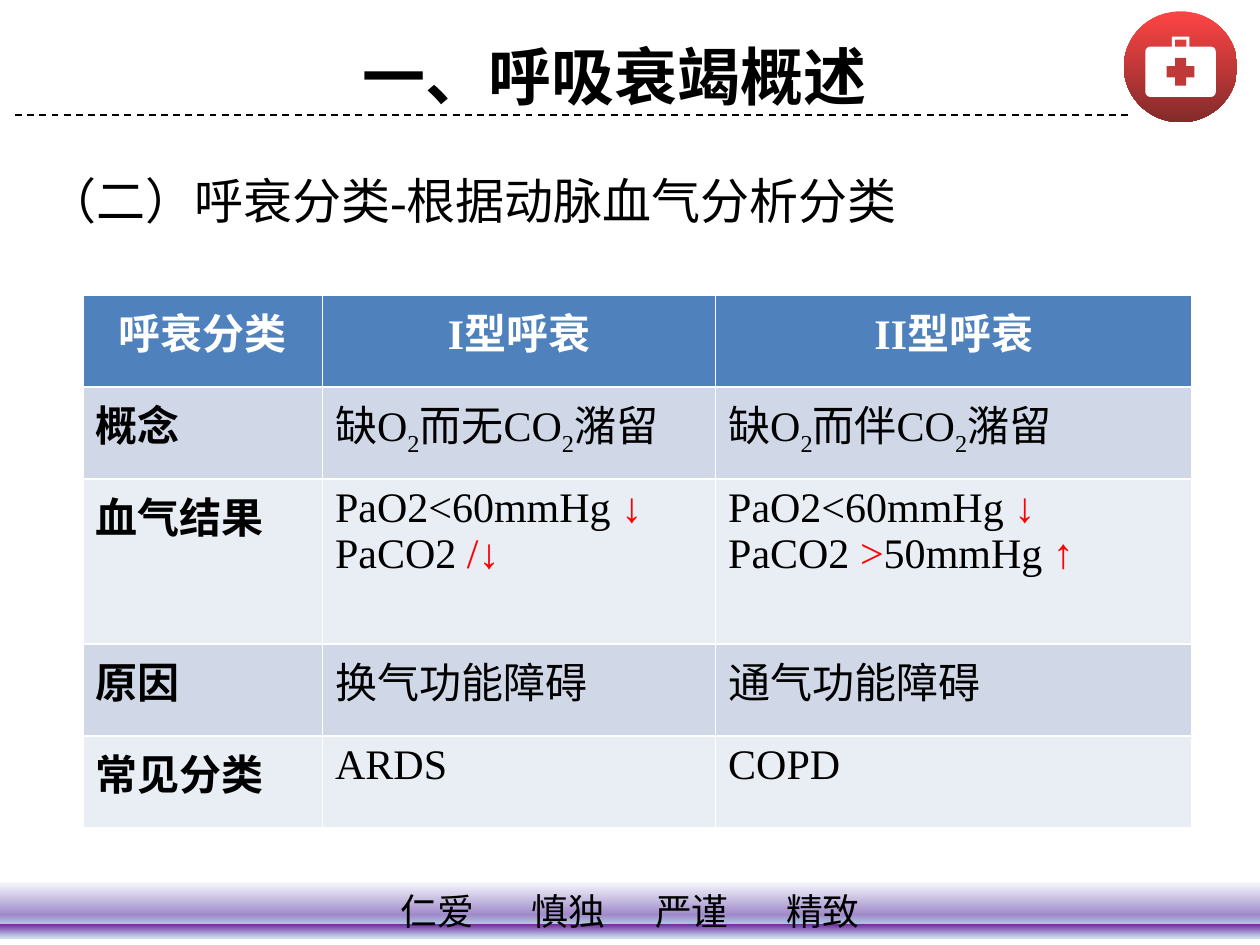
from typing import NamedTuple

from lxml.etree import SubElement
from pptx import Presentation
from pptx.dml.color import RGBColor
from pptx.enum.dml import MSO_LINE_DASH_STYLE as Dash
from pptx.enum.shapes import MSO_CONNECTOR as Connector
from pptx.enum.shapes import MSO_SHAPE as Preset
from pptx.enum.text import MSO_ANCHOR as Anchor
from pptx.enum.text import MSO_AUTO_SIZE as AutoSize
from pptx.enum.text import PP_ALIGN as Align
from pptx.oxml.ns import qn
from pptx.util import Inches, Pt

BLACK = RGBColor(0x00, 0x00, 0x00)
WHITE = RGBColor(0xFF, 0xFF, 0xFF)
RED = RGBColor(0xFF, 0x00, 0x00)
HEADER_BLUE = RGBColor(0x4F, 0x81, 0xBD)
BAND_DARK = RGBColor(0xD0, 0xD8, 0xE8)
BAND_LIGHT = RGBColor(0xE9, 0xED, 0xF4)
CROSS_RED = RGBColor(0xC0, 0x38, 0x38)
LATIN = "Times New Roman"
CHINESE = "Noto Sans CJK SC"

BADGE_STOPS = [(0, "FE4444"), (100, "832B2B")]
FOOTER_STOPS = [
    (0, "F6F9FC"), (58, "9F89C9"), (74, "B0C6E1"), (75, "7030A0"), (93, "B7B5DE"),
    (96, "C3CBE8"), (98, "C9D6ED"), (99, "CDDFF1"), (100, "CAD9EB"),
]


class Run(NamedTuple):
    text: str
    color: RGBColor = BLACK
    subscript: bool = False


class Box(NamedTuple):
    left: float
    top: float
    width: float
    height: float

    def lengths(self):
        return [Inches(value) for value in self]


class BadgePart(NamedTuple):
    preset: Preset
    box: Box
    adjustment: float
    color: RGBColor


def concept(link: str) -> list[list[Run]]:
    two = Run("2", subscript=True)
    return [[Run("缺O"), two, Run(f"{link}CO"), two, Run("潴留")]]


LOW_OXYGEN = [Run("PaO2<60mmHg "), Run("↓", RED)]
ROWS = [
    ("概念", concept("而无"), concept("而伴")),
    (
        "血气结果",
        [LOW_OXYGEN, [Run("PaCO2 "), Run("/↓", RED)]],
        [LOW_OXYGEN, [Run("PaCO2 "), Run(">", RED), Run("50mmHg "), Run("↑", RED)]],
    ),
    ("原因", [[Run("换气功能障碍")]], [[Run("通气功能障碍")]]),
    ("常见分类", [[Run("ARDS")]], [[Run("COPD")]]),
]
HEADINGS = ["呼衰分类", "I型呼衰", "II型呼衰"]
COLUMN_WIDTHS = [1.9, 3.12, 3.78]
ROW_HEIGHTS = [0.73, 0.73, 1.31, 0.73, 0.73]

BADGE_PARTS = [
    BadgePart(Preset.FRAME, Box(9.3, 0.29, 0.14, 0.12), 0.2, WHITE),
    BadgePart(Preset.ROUNDED_RECTANGLE, Box(9.09, 0.37, 0.56, 0.4), 0.1, WHITE),
    BadgePart(Preset.CROSS, Box(9.26, 0.46, 0.22, 0.22), 0.3, CROSS_RED),
]


def add_text(paragraph, text: str, *, size=24, font=LATIN, color=BLACK,
             bold=False, subscript=False, align=Align.LEFT) -> None:
    paragraph.alignment = align
    run = paragraph.add_run()
    run.text = text
    run.font.size = Pt(size)
    run.font.bold = bold
    run.font.color.rgb = color
    run.font.name = font
    properties = run.font._element
    SubElement(properties, qn("a:ea"), typeface=CHINESE)
    if subscript:
        properties.set("baseline", "-25000")


def place(placeholder, box: Box, anchor: Anchor):
    placeholder.left, placeholder.top, placeholder.width, placeholder.height = box.lengths()
    frame = placeholder.text_frame
    frame.auto_size = AutoSize.NONE
    frame.word_wrap = True
    frame.vertical_anchor = anchor
    return frame.paragraphs[0]


def add_shape(slide, preset: Preset, box: Box):
    shape = slide.shapes.add_shape(preset, *box.lengths())
    shape.shadow.inherit = False
    shape.line.fill.background()
    return shape


def fill_gradient(shape, stops: list[tuple[int, str]]) -> None:
    shape.fill.gradient()
    shape.fill.gradient_angle = 270
    stop_list = shape._element.spPr.find(".//" + qn("a:gsLst"))
    stop_list.clear()
    for position, color in stops:
        stop = SubElement(stop_list, qn("a:gs"), pos=str(position * 1000))
        SubElement(stop, qn("a:srgbClr"), val=color)


def add_footer(slide) -> None:
    footer = add_shape(slide, Preset.RECTANGLE, Box(0, 7, 10, 0.45))
    fill_gradient(footer, FOOTER_STOPS)
    frame = footer.text_frame
    frame.margin_left = Inches(3.18)
    frame.margin_right = frame.margin_top = frame.margin_bottom = 0
    paragraph = frame.paragraphs[0]
    tabs = SubElement(paragraph._p.get_or_add_pPr(), qn("a:tabLst"))
    for position in (1.04, 2.02, 3.06):
        SubElement(tabs, qn("a:tab"), pos=str(Inches(position)), algn="l")
    add_text(paragraph, "仁爱\t慎独\t严谨\t精致", size=21, font=CHINESE)


def add_divider(slide) -> None:
    divider = slide.shapes.add_connector(
        Connector.STRAIGHT, Inches(0.12), Inches(0.91), Inches(8.99), Inches(0.91))
    divider.line.color.rgb = BLACK
    divider.line.width = Pt(1)
    divider.line.dash_style = Dash.DASH
    SubElement(divider._element.spPr, qn("a:effectLst"))


def add_badge(slide) -> None:
    fill_gradient(add_shape(slide, Preset.OVAL, Box(8.92, 0.09, 0.9, 0.88)), BADGE_STOPS)
    for part in BADGE_PARTS:
        shape = add_shape(slide, part.preset, part.box)
        shape.adjustments[0] = part.adjustment
        shape.fill.solid()
        shape.fill.fore_color.rgb = part.color


def fill_cell(cell, color: RGBColor) -> None:
    cell.fill.solid()
    cell.fill.fore_color.rgb = color


def add_comparison(slide) -> None:
    box = Box(0.66, 2.34, sum(COLUMN_WIDTHS), sum(ROW_HEIGHTS))
    table = slide.shapes.add_table(
        len(ROW_HEIGHTS), len(COLUMN_WIDTHS), *box.lengths()).table
    for column, width in zip(table.columns, COLUMN_WIDTHS):
        column.width = Inches(width)
    for row, height in zip(table.rows, ROW_HEIGHTS):
        row.height = Inches(height)
    for column, heading in enumerate(HEADINGS):
        cell = table.cell(0, column)
        fill_cell(cell, HEADER_BLUE)
        add_text(cell.text_frame.paragraphs[0], heading, color=WHITE, bold=True,
                 align=Align.CENTER)
    for row, (label, *contents) in enumerate(ROWS, start=1):
        band = BAND_DARK if row % 2 else BAND_LIGHT
        cell = table.cell(row, 0)
        fill_cell(cell, band)
        add_text(cell.text_frame.paragraphs[0], label, bold=True)
        for column, lines in enumerate(contents, start=1):
            cell = table.cell(row, column)
            fill_cell(cell, band)
            frame = cell.text_frame
            for index, runs in enumerate(lines):
                paragraph = frame.add_paragraph() if index else frame.paragraphs[0]
                for run in runs:
                    add_text(paragraph, run.text, color=run.color, subscript=run.subscript)


def main() -> None:
    presentation = Presentation()
    presentation.slide_width, presentation.slide_height = Inches(10), Inches(7.5)
    slide = presentation.slides.add_slide(presentation.slide_layouts[1])
    add_footer(slide)
    add_divider(slide)
    subtitle = place(slide.placeholders[1], Box(0.28, 1.3, 7.13, 0.57), Anchor.TOP)
    properties = subtitle._p.get_or_add_pPr()
    properties.set("marL", "0")
    properties.set("indent", "0")
    SubElement(properties, qn("a:buNone"))
    subtitle.space_before = Pt(0)
    add_text(subtitle, "（二）呼衰分类-根据动脉血气分析分类", size=28)
    title = place(slide.shapes.title, Box(2.48, 0.36, 4.79, 0.47), Anchor.MIDDLE)
    add_text(title, "一、呼吸衰竭概述", size=36, bold=True, align=Align.CENTER)
    add_comparison(slide)
    add_badge(slide)
    presentation.save("out.pptx")


if __name__ == "__main__":
    main()
